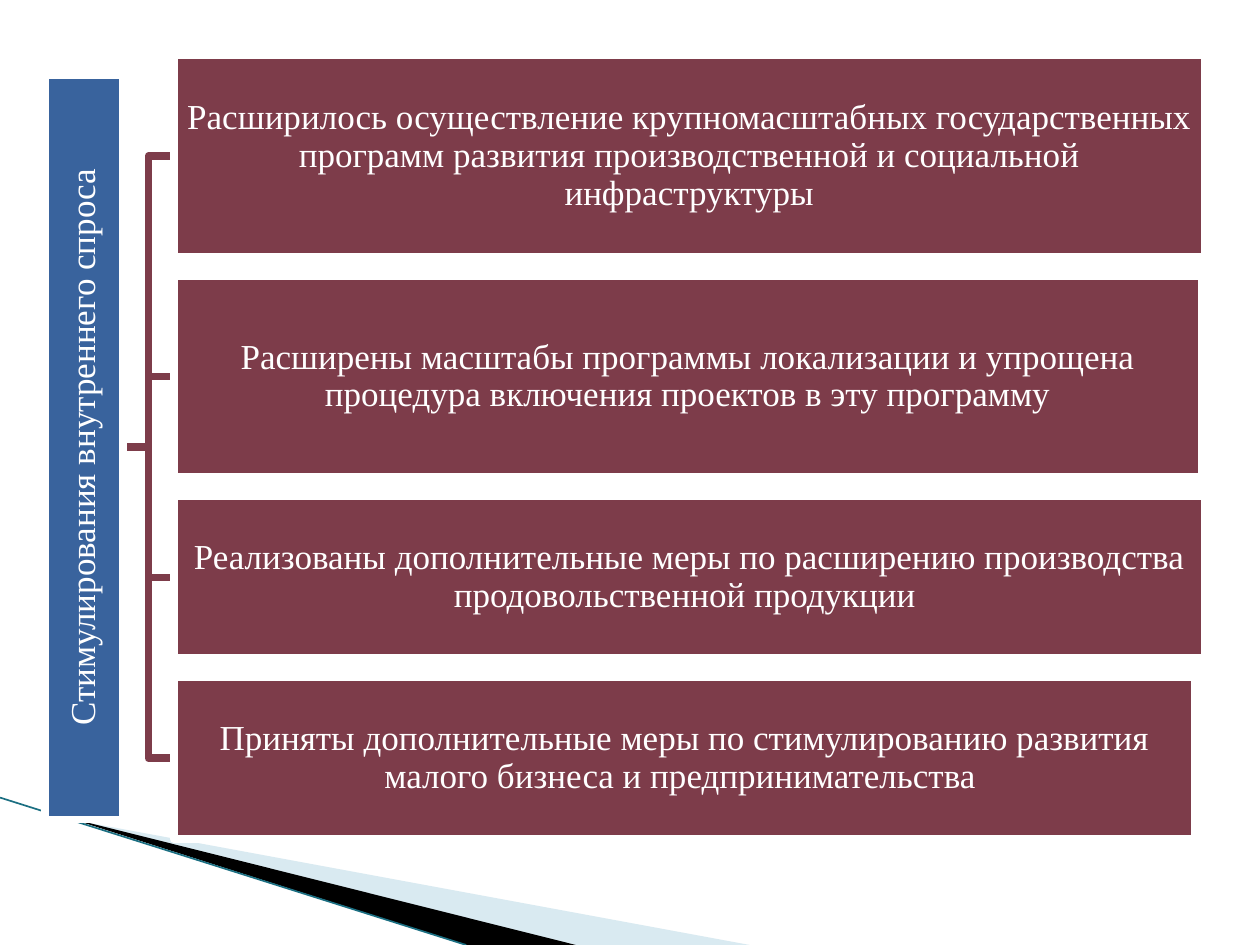
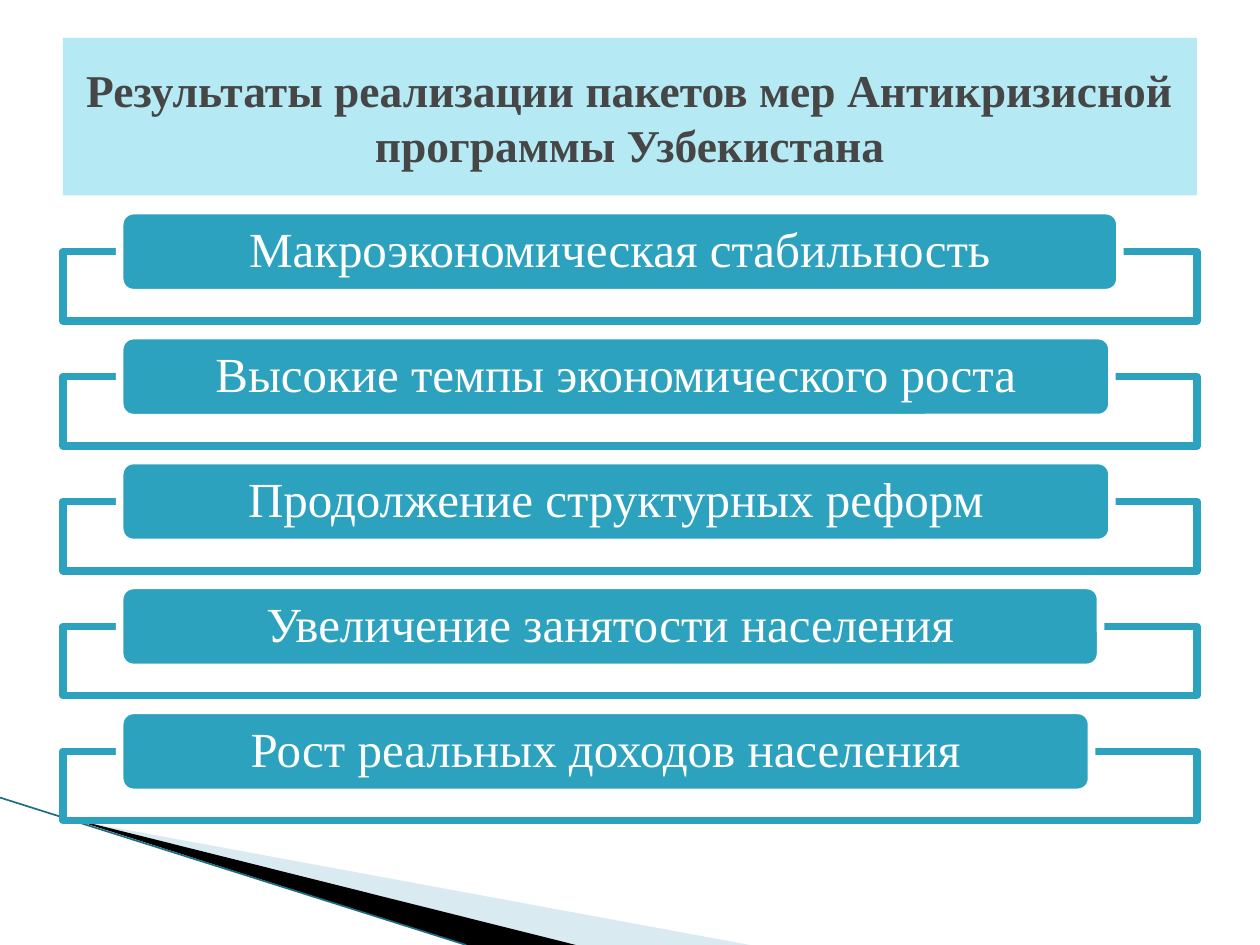
from lxml.etree import SubElement
from pptx import Presentation
from pptx.dml.color import RGBColor
from pptx.enum.shapes import MSO_CONNECTOR, MSO_SHAPE
from pptx.enum.text import MSO_ANCHOR, PP_ALIGN
from pptx.oxml.ns import qn
from pptx.util import Inches, Pt

WHITE = RGBColor(0xFF, 0xFF, 0xFF)
BLACK = RGBColor(0, 0, 0)
WINE = RGBColor(0x7D, 0x3C, 0x4A)
BLUE = RGBColor(0x39, 0x63, 0x9D)
TEAL = RGBColor(0x2D, 0xA2, 0xBF)
DARK_TEAL = RGBColor(0x1B, 0x6F, 0x82)
PALE_BLUE = RGBColor(0xA0, 0xCB, 0xDC)
TITLE_FILL = RGBColor(0xB5, 0xE9, 0xF4)
TITLE_TEXT = RGBColor(0x46, 0x46, 0x46)
FONT = "Times New Roman"
BORDER = 4.33

# The grid has 100 columns and 100 rows on each slide.
WIDTH, HEIGHT = Inches(10), Inches(7.5)


def cols(n):
    return int(WIDTH * n / 100)


def rows(n):
    return int(HEIGHT * n / 100)


def set_alpha(shape, percent):
    color = shape.fill._xPr.find(qn("a:solidFill"))[0]
    SubElement(color, qn("a:alpha")).set("val", str(percent * 1000))


def set_text(shape, text, size=20, color=WHITE, bold=False, spacing=0.9, inset=(0.01, 0.01)):
    tf = shape.text_frame
    tf.word_wrap = True
    tf.vertical_anchor = MSO_ANCHOR.MIDDLE
    tf.margin_left = tf.margin_right = Inches(inset[0])
    tf.margin_top = tf.margin_bottom = Inches(inset[1])
    p = tf.paragraphs[0]
    p.alignment = PP_ALIGN.CENTER
    p.line_spacing = spacing
    r = p.add_run()
    r.text = text
    r.font.name, r.font.size, r.font.bold = FONT, Pt(size), bold
    r.font.color.rgb = color


def add_box(s, box, fill, line=None, kind=MSO_SHAPE.RECTANGLE):
    """Place a shape on a box of (column, row, columns, rows)."""
    x, y, w, h = box
    sp = s.shapes.add_shape(kind, cols(x), rows(y), cols(w), rows(h))
    sp.shadow.inherit = False
    sp.fill.solid()
    sp.fill.fore_color.rgb = fill
    if line is None:
        sp.line.fill.background()
    else:
        sp.line.color.rgb = line
        sp.line.width = Pt(BORDER)
    return sp


def add_path(s, points, fill=None, line=None):
    """Draw a filled polygon, or an open line when there is no fill."""
    start, *rest = [(cols(x), rows(y)) for x, y in points]
    builder = s.shapes.build_freeform(*start)
    builder.add_line_segments(rest, close=fill is not None)
    sp = builder.convert_to_shape()
    sp.shadow.inherit = False
    if fill is None:
        sp.fill.background()
        sp.line.color.rgb = line
        sp.line.width = Pt(BORDER)
    else:
        sp.fill.solid()
        sp.fill.fore_color.rgb = fill
        sp.line.fill.background()
    return sp


def add_corner_wedges(s):
    pale = add_path(s, [(5.5, 86.7), (59.5, 100), (45.6, 100)], fill=PALE_BLUE)
    set_alpha(pale, 40)
    add_path(s, [(5.3, 86.5), (45.7, 100), (37, 100)], fill=BLACK)
    edge = s.shapes.add_connector(MSO_CONNECTOR.STRAIGHT, 0, rows(84.4), cols(37), rows(100))
    edge.line.color.rgb = DARK_TEAL
    edge.line.width = Pt(0.95)
    SubElement(edge._element.spPr, qn("a:effectLst"))


def new_slide(prs):
    s = prs.slides.add_slide(prs.slide_layouts[6])
    add_corner_wedges(s)
    return s


def add_cause_tree(s, box, cause, measures, gap=2.04):
    """Upright bar on the left, bracketed to a stack of (text, width, height)."""
    x, y, w, h = box
    bar_w, bar_h, stack_x = 6.2, 78.8, x + 10.25
    middle = y + h / 2
    tops = [y + sum(m[2] + gap for m in measures[:i]) for i in range(len(measures))]

    fork = (x + bar_w + stack_x) / 2
    for top, (_, _, height) in reversed(list(zip(tops, measures))):
        target = top + height / 2
        add_path(s, [(x + bar_w, middle), (fork, middle), (fork, target), (stack_x, target)],
                 line=WINE)

    bar = add_box(s, (x, middle - bar_h / 2, bar_w, bar_h), BLUE, WHITE)
    center_x, center_y = bar.left + bar.width // 2, bar.top + bar.height // 2
    bar.width, bar.height = bar.height, bar.width
    bar.left, bar.top = center_x - bar.width // 2, center_y - bar.height // 2
    bar.rotation = 270
    set_text(bar, cause)

    for top, (text, share, height) in zip(tops, measures):
        set_text(add_box(s, (stack_x, top, (x + w - stack_x) * share, height), WINE, WHITE), text)


def add_title(s, box, text):
    set_text(add_box(s, box, TITLE_FILL), text, size=26, color=TITLE_TEXT, bold=True,
             spacing=1, inset=(0.1, 0.05))


def add_result_list(s, box, results):
    """Evenly spaced frames, each with a rounded label over its top edge."""
    x, y, w, h = box
    pitch, label_h, frame_h = h / len(results), 8.67, 7.33
    for i, (text, share) in enumerate(results):
        top = y + i * pitch
        add_box(s, (x, top + label_h / 2, w, frame_h), WHITE, TEAL)
        label = add_box(s, (x + w * 0.05, top, w * share, label_h), TEAL, WHITE,
                        MSO_SHAPE.ROUNDED_RECTANGLE)
        set_text(label, text, size=28, inset=(0.27, 0.03))


def main():
    prs = Presentation()
    prs.slide_width, prs.slide_height = WIDTH, HEIGHT

    s = new_slide(prs)
    add_cause_tree(s, (3.55, 5.87, 92.05, 82.92), "Стимулирования внутреннего спроса", [
        ("Расширилось осуществление крупномасштабных государственных программ развития "
         "производственной и социальной инфраструктуры", 1, 21.3),
        ("Расширены масштабы программы локализации и упрощена процедура включения "
         "проектов в эту программу", 0.997, 21.3),
        ("Реализованы дополнительные меры по расширению производства "
         "продовольственной продукции ", 1, 17.1),
        ("Приняты дополнительные меры по стимулированию развития малого бизнеса "
         "и предпринимательства ", 0.991, 17.1),
    ])

    s = new_slide(prs)
    add_result_list(s, (5, 22.3, 90, 66.1), [
        ("Макроэкономическая стабильность", 0.882),
        ("Высокие темпы экономического роста", 0.875),
        ("Продолжение структурных реформ", 0.875),
        ("Увеличение занятости населения", 0.865),
        ("Рост реальных доходов населения", 0.857),
    ])
    add_title(s, (5, 4, 90, 16.67),
              "Результаты реализации пакетов мер Антикризисной программы Узбекистана")

    prs.save("out.pptx")


if __name__ == "__main__":
    main()
